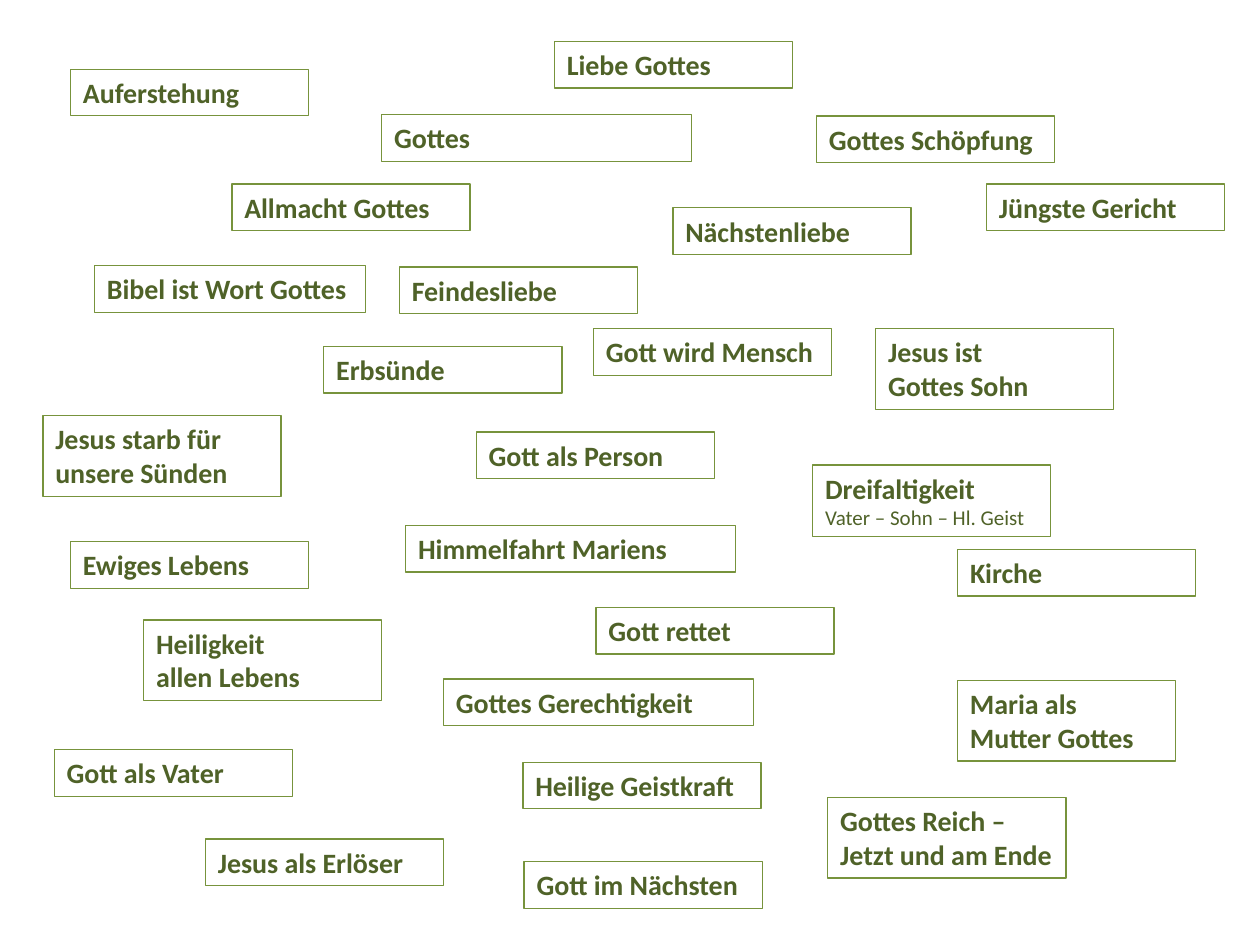
from dataclasses import dataclass

from pptx import Presentation
from pptx.dml.color import RGBColor
from pptx.enum.text import MSO_ANCHOR, MSO_AUTO_SIZE, PP_ALIGN
from pptx.util import Inches, Pt


@dataclass(frozen=True)
class Theme:
    """Colours, type sizes and grid measures, in tenths of an inch."""

    font: str = "Calibri"
    text: RGBColor = RGBColor(0x4F, 0x62, 0x28)
    border: RGBColor = RGBColor(0x77, 0x93, 0x3C)
    border_width: float = 0.75
    term_size: int = 16
    detail_size: int = 12
    columns: int = 100
    rows: int = 75
    card_width: float = 18.9
    line_rows: float = 2.7
    detail_rows: float = 2
    padding_rows: float = 1


class TermSlide:
    """Holds the theme and the current slide and draws its term cards."""

    def __init__(self, presentation, theme):
        """Add a blank slide and set up the grid."""
        self.theme = theme
        self.slide = presentation.slides.add_slide(presentation.slide_layouts[6])
        self.column = presentation.slide_width / theme.columns
        self.row = presentation.slide_height / theme.rows

    def format(self, target, values):
        """Set each attribute named in values."""
        for name, value in values.items():
            setattr(target, name, value)

    def paragraph(self, paragraph, text, size, bold):
        """Write one left-aligned line in the theme's type."""
        paragraph.text = text
        paragraph.alignment = PP_ALIGN.LEFT
        font = paragraph.runs[0].font
        self.format(font, {"name": self.theme.font, "size": Pt(size), "bold": bold})
        font.color.rgb = self.theme.text

    def card(self, left, top, text, width=None, lines=None, detail=None):
        """Draw a bordered term at a grid position, with an optional detail line."""
        theme = self.theme
        terms = text.split("\n")
        height = theme.padding_rows + theme.line_rows * (lines or len(terms))
        height += theme.detail_rows if detail else 0
        shape = self.slide.shapes.add_textbox(
            round(left * self.column),
            round(top * self.row),
            round((width or theme.card_width) * self.column),
            round(height * self.row),
        )
        shape.line.color.rgb = theme.border
        shape.line.width = Pt(theme.border_width)
        frame = shape.text_frame
        self.format(frame, {
            "word_wrap": True,
            "auto_size": MSO_AUTO_SIZE.SHAPE_TO_FIT_TEXT,
            "vertical_anchor": MSO_ANCHOR.TOP,
        })
        content = [(term, theme.term_size, True) for term in terms]
        if detail:
            content.append((detail, theme.detail_size, False))
        for index, values in enumerate(content):
            paragraph = frame.add_paragraph() if index else frame.paragraphs[0]
            self.paragraph(paragraph, *values)


TERMS = [
    (44, 3.3, "Liebe Gottes"),
    (5.6, 5.5, "Auferstehung"),
    (64.8, 9.2, "Gottes Schöpfung"),
    (3.4, 33, "Jesus starb für unsere Sünden", {"lines": 2}),
    (53.4, 16.5, "Nächstenliebe"),
    (18.4, 14.6, "Allmacht Gottes"),
    (69.5, 26.1, "Jesus ist\nGottes Sohn"),
    (11.4, 49.2, "Heiligkeit\nallen Lebens"),
    (7.5, 21.1, "Bibel ist Wort Gottes", {"width": 21.5}),
    (64.5, 36.9, "Dreifaltigkeit", {"detail": "Vater – Sohn – Hl. Geist"}),
    (31.7, 21.2, "Feindesliebe"),
    (76, 43.6, "Kirche"),
    (78.3, 14.6, "Jüngste Gericht"),
    (25.7, 27.5, "Erbsünde"),
    (5.6, 43, "Ewiges Lebens"),
    (4.3, 59.5, "Gott als Vater"),
    (37.8, 34.3, "Gott als Person"),
    (76, 54, "Maria als Mutter Gottes", {"width": 17.3, "lines": 2}),
    (16.3, 66.6, "Jesus als Erlöser"),
    (41.5, 60.5, "Heilige Geistkraft"),
    (32.2, 41.7, "Himmelfahrt Mariens", {"width": 26.2}),
    (41.6, 68.4, "Gott im Nächsten"),
    (47.3, 48.2, "Gott rettet"),
    (47.1, 26.1, "Gott wird Mensch"),
    (35.2, 53.9, "Gottes Gerechtigkeit", {"width": 24.6}),
    (65.7, 63.3, "Gottes Reich –\nJetzt und am Ende"),
    (30.3, 9.1, "Gottes", {"width": 24.6}),
]


def main():
    """Build the slide of faith terms and save it."""
    presentation = Presentation()
    presentation.slide_width = Inches(10)
    presentation.slide_height = Inches(7.5)
    term_slide = TermSlide(presentation, Theme())
    for left, top, text, *options in TERMS:
        term_slide.card(left, top, text, **(options[0] if options else {}))
    presentation.save("out.pptx")


if __name__ == "__main__":
    main()
